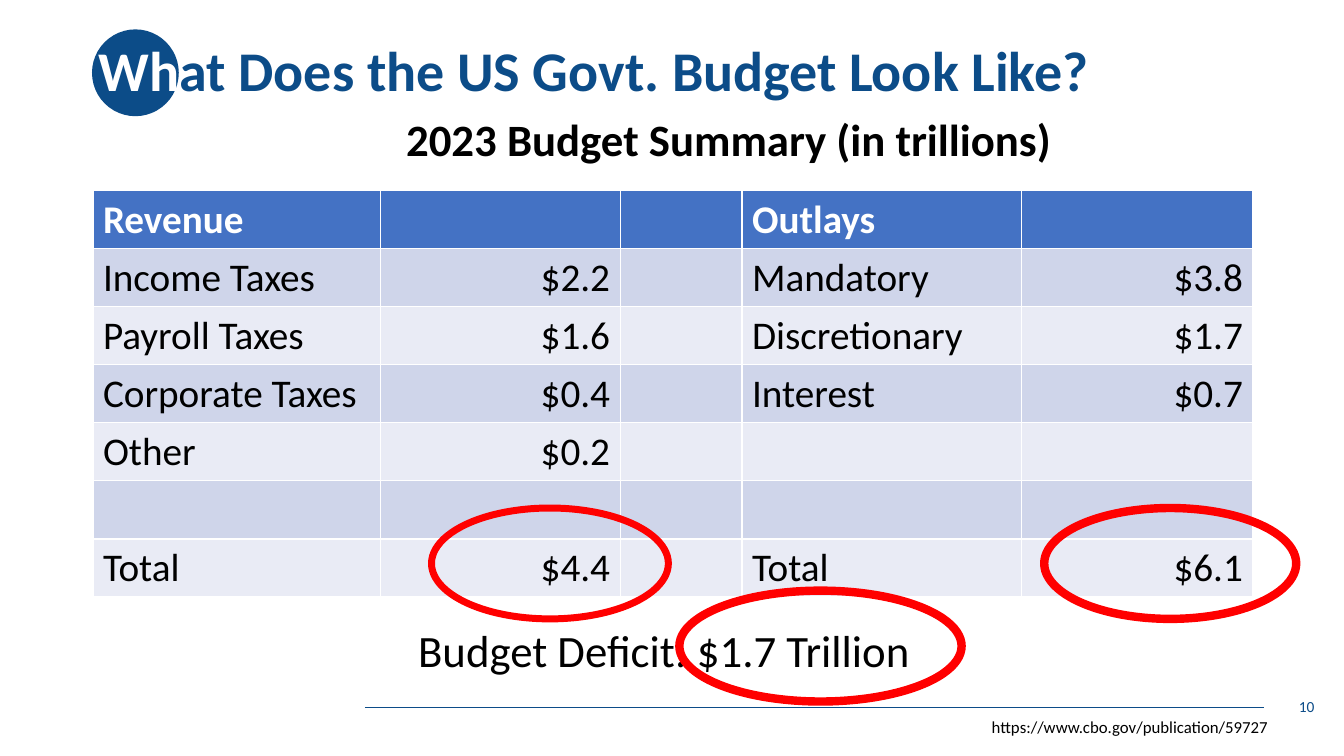
from pptx import Presentation, util as u
from pptx.dml.color import RGBColor
from pptx.enum import shapes, text
from pptx.oxml.ns import qn
from lxml import etree

HUE = {"navy": "0C4C88", "white": "FFFFFF", "black": "000000", "red": "FF0000",
       "head": "4472C4", "dark": "CFD5EA", "light": "E9EBF5"}
TITLE = [("Wh", "white"), ("at Does the US Govt. Budget Look Like?", "navy")]
ROWS = [
    ("Revenue", "", "", "Outlays", ""),
    ("Income Taxes", "$2.2", "", "Mandatory", "$3.8"),
    ("Payroll Taxes", "$1.6", "", "Discretionary", "$1.7"),
    ("Corporate Taxes", "$0.4", "", "Interest", "$0.7"),
    ("Other", "$0.2", "", "", ""),
    ("", "", "", "", ""),
    ("Total", "$4.4", "", "Total", "$6.1"),
]
WIDTHS = [205.2, 171.4, 87.1, 199.4, 165.6]
ROW_H = 41.4
LABELS = [
    ("2023 Budget Summary (in trillions)", (283, 76.3, 479.5, 46), 32, True, "black", "LEFT"),
    ("Budget Deficit: $1.7 Trillion", (291.6, 441.4, 370, 46), 32, False, "black", "LEFT"),
    ("https://www.cbo.gov/publication/59727", (701.3, 508.3, 214.6, 21.6), 12, False, "black", "LEFT"),
    ("10", (730, 490.3, 216, 28.8), 11, False, "navy", "RIGHT"),
]
RINGS = [((308.2, 362.9, 169.2, 79.2), 5),
         ((745.9, 362.9, 180, 79.2), 6),
         ((485.3, 421.9, 201.6, 79.2), 6)]


def rgb(name):
    return RGBColor.from_string(HUE[name])


def pts(box):
    return [u.Pt(n) for n in box]


def style(font, size, bold, hue):
    for key, val in {"name": "Calibri", "size": u.Pt(size), "bold": bold}.items():
        setattr(font, key, val)
    font.color.rgb = rgb(hue)


def oval(slide, box):
    ring = slide.shapes.add_shape(shapes.MSO_SHAPE.OVAL, *pts(box))
    ring.shadow.inherit = False
    return ring


def add_title(slide):
    title = slide.shapes.title
    title.left, title.top, title.width, title.height = pts((63.4, 0, 828, 104.4))
    frame = title.text_frame
    frame.auto_size = text.MSO_AUTO_SIZE.NONE
    frame.vertical_anchor = text.MSO_ANCHOR.MIDDLE
    para = frame.paragraphs[0]
    para.alignment = text.PP_ALIGN.LEFT
    para.line_spacing = 0.9
    for words, hue in TITLE:
        run = para.add_run()
        run.text = words
        style(run.font, 40, True, hue)

    disc = oval(slide, (65.7, 21, 62, 62))
    disc.fill.solid()
    disc.fill.fore_color.rgb = rgb("navy")
    disc.line.fill.background()
    rule = slide.shapes.add_connector(shapes.MSO_CONNECTOR.STRAIGHT, *pts((260.6, 505, 903, 505)))
    rule.line.color.rgb = rgb("navy")
    rule.line.width = u.Pt(0.5)
    etree.SubElement(rule.element.spPr, qn("a:effectLst"))
    for part in (rule, disc):
        title.element.addprevious(part.element)


def add_budget(slide):
    box = pts((66.4, 136.3, sum(WIDTHS), ROW_H * len(ROWS)))
    grid = slide.shapes.add_table(len(ROWS), len(WIDTHS), *box).table
    for col, width in zip(grid.columns, WIDTHS):
        col.width = u.Pt(width)
    for r, row in enumerate(ROWS):
        grid.rows[r].height = u.Pt(ROW_H)
        fill = "head" if r == 0 else "dark" if r % 2 else "light"
        for c, words in enumerate(row):
            cell = grid.cell(r, c)
            cell.text = words
            cell.fill.solid()
            cell.fill.fore_color.rgb = rgb(fill)
            para = cell.text_frame.paragraphs[0]
            style(para.font, 28, r == 0, "black" if r else "white")
            if words.startswith("$"):
                para.alignment = text.PP_ALIGN.RIGHT


def add_labels(slide):
    for words, box, size, bold, hue, align in LABELS:
        frame = slide.shapes.add_textbox(*pts(box)).text_frame
        frame.word_wrap = align == "RIGHT"
        if align == "RIGHT":
            frame.vertical_anchor = text.MSO_ANCHOR.MIDDLE
        para = frame.paragraphs[0]
        para.text = words
        para.alignment = text.PP_ALIGN[align]
        style(para.font, size, bold, hue)


def add_rings(slide):
    for box, width in RINGS:
        ring = oval(slide, box)
        ring.fill.background()
        ring.line.color.rgb = rgb("red")
        ring.line.width = u.Pt(width)


def main():
    deck = Presentation()
    deck.slide_width, deck.slide_height = u.Pt(960), u.Pt(540)
    slide = deck.slides.add_slide(deck.slide_layouts[5])
    add_title(slide)
    add_budget(slide)
    add_labels(slide)
    add_rings(slide)
    deck.save("out.pptx")


if __name__ == "__main__":
    main()
